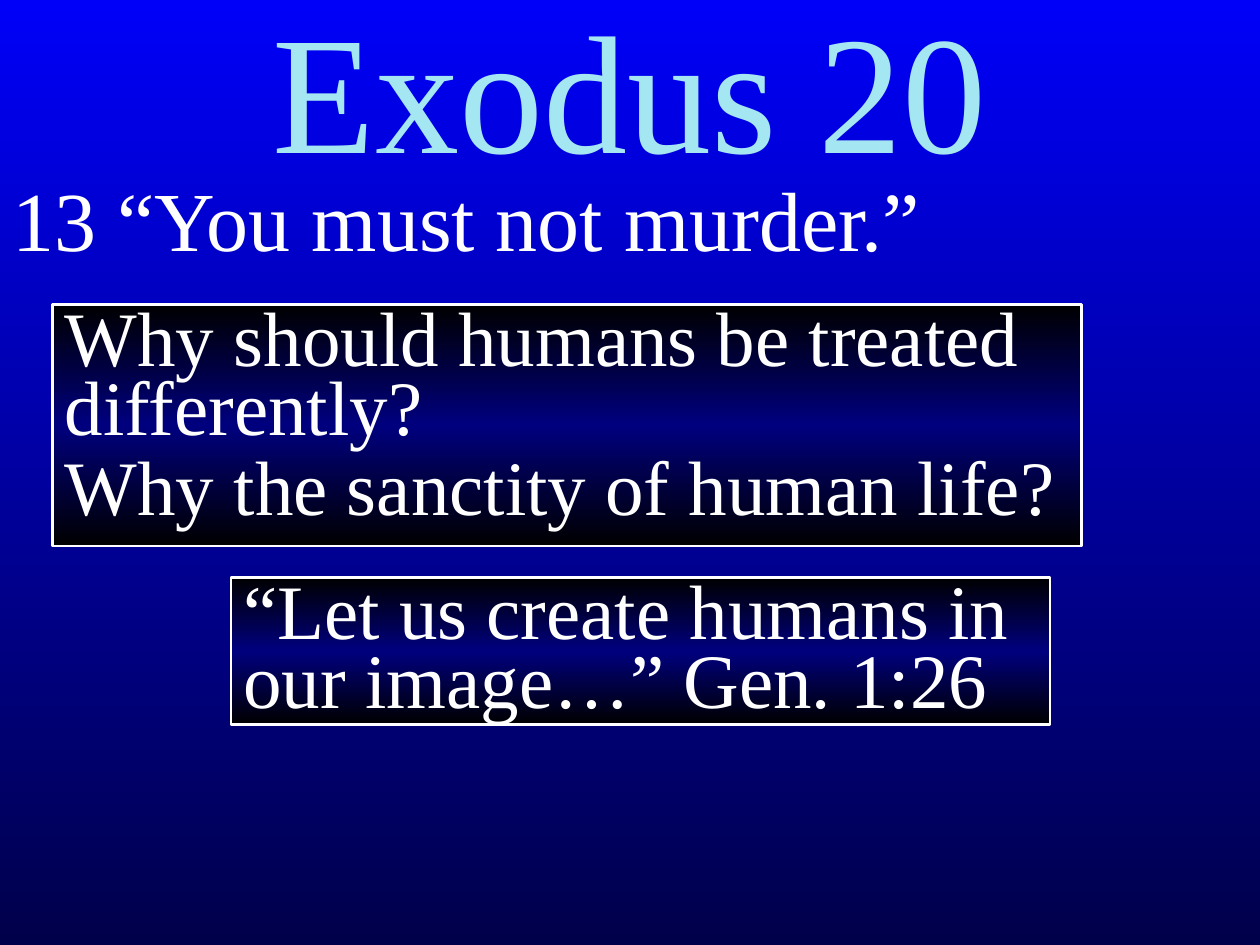
from copy import deepcopy

from pptx import Presentation
from pptx.dml.color import RGBColor
from pptx.enum.shapes import MSO_SHAPE
from pptx.enum.text import MSO_ANCHOR, PP_ALIGN
from pptx.util import Inches, Pt

RECTANGLE = MSO_SHAPE.RECTANGLE
TOP, MIDDLE = MSO_ANCHOR.TOP, MSO_ANCHOR.MIDDLE
LEFT, CENTER = PP_ALIGN.LEFT, PP_ALIGN.CENTER
WHITE = "FFFFFF"
PANEL_COLORS = ["000000", "00007E", "000000"]

presentation = Presentation()
presentation.slide_width = Inches(10)
presentation.slide_height = Inches(7.5)
slide = presentation.slides.add_slide(presentation.slide_layouts[6])
column = presentation.slide_width / 120
row = presentation.slide_height / 90


def fill_downward(fill, colors):
    """Fill with evenly spaced gradient stops from top to bottom."""
    fill.gradient()
    fill.gradient_angle = 270
    stop_list = fill.gradient_stops[0]._gs.getparent()
    for _ in colors[2:]:
        stop_list.append(deepcopy(stop_list[0]))
    for index, (stop, color) in enumerate(zip(fill.gradient_stops, colors)):
        stop.position = index / (len(colors) - 1)
        stop.color.rgb = RGBColor.from_string(color)


def write(shape, lines, size, color, anchor, paragraph_format):
    frame = shape.text_frame
    frame.word_wrap = True
    frame.vertical_anchor = anchor
    frame.text = "\n".join(lines)
    for paragraph in frame.paragraphs:
        for name, value in paragraph_format.items():
            setattr(paragraph, name, value)
        font = paragraph.runs[0].font
        font.name, font.size = "Times New Roman", Pt(size)
        font.color.rgb = RGBColor.from_string(color)


fill_downward(slide.background.fill, ["0000F8", "00004A"])

title = slide.shapes.add_textbox(0, 0, int(120 * column), int(20 * row))
write(title, ["Exodus 20"], 96, "A5E6F3", MIDDLE,
      {"alignment": CENTER, "line_spacing": 0.8})

verse = slide.shapes.add_textbox(0, int(18 * row), int(120 * column), int(64 * row))
write(verse, ["13\u00a0“You must not murder.”"], 48, WHITE, TOP,
      {"alignment": LEFT, "line_spacing": 0.7, "space_before": Pt(4.8)})

# Left, top, width and height in columns and rows
panels = [
    ((5, 29, 98, 23), ["Why should humans be treated differently?",
                       "Why the sanctity of human life?"]),
    ((22, 55, 78, 14), ["“Let us create humans in our image…” Gen. 1:26"]),
]
for (left, top, width, height), lines in panels:
    panel = slide.shapes.add_shape(RECTANGLE, int(left * column), int(top * row),
                                   int(width * column), int(height * row))
    panel.shadow.inherit = False
    fill_downward(panel.fill, PANEL_COLORS)
    panel.line.color.rgb = RGBColor.from_string(WHITE)
    panel.line.width = Pt(1.5)
    write(panel, lines, 44, WHITE, TOP,
          {"alignment": LEFT, "line_spacing": 0.75, "space_before": Pt(6)})

presentation.save("out.pptx")
